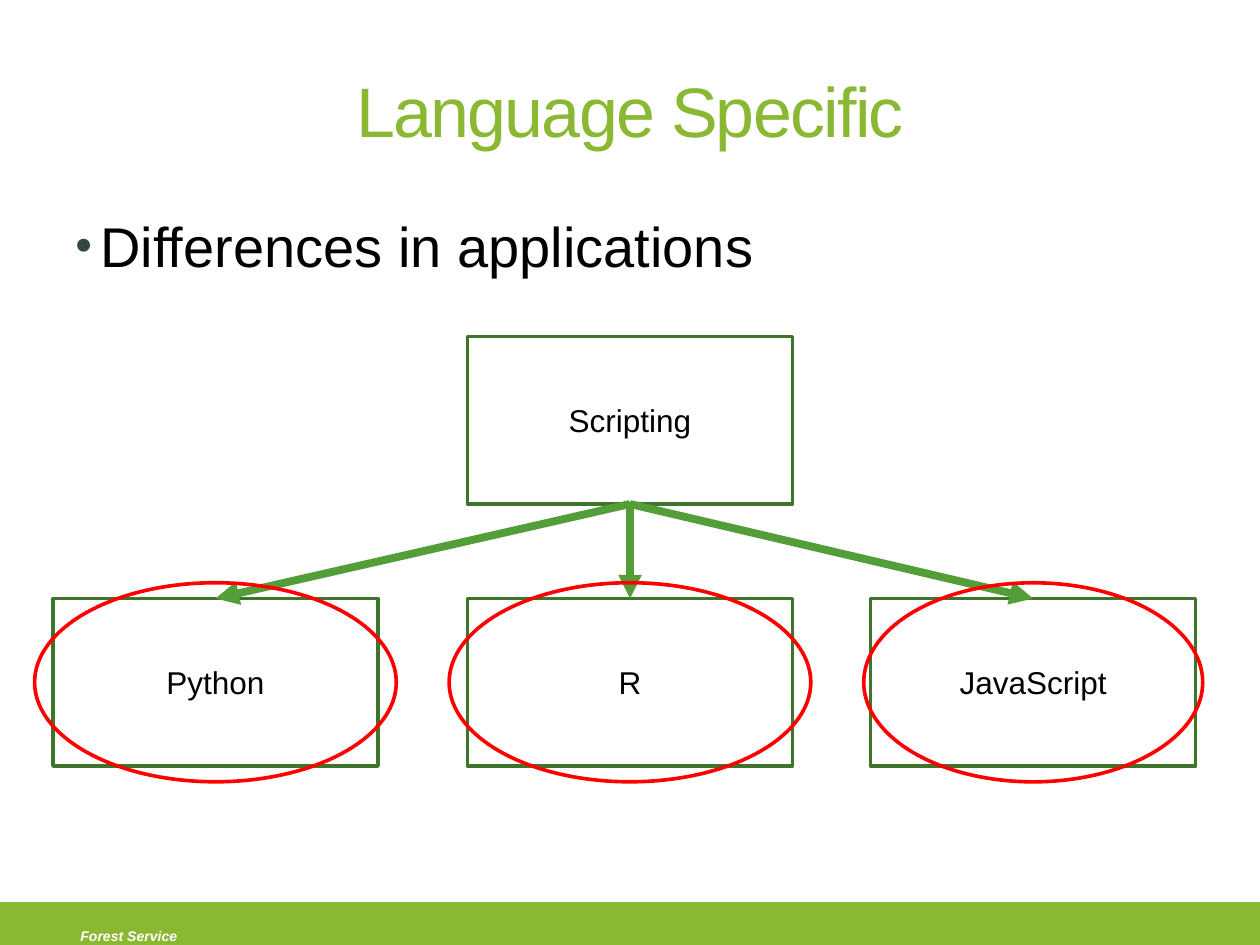
from dataclasses import dataclass

from lxml.etree import SubElement
from pptx import Presentation
from pptx.dml.color import RGBColor
from pptx.enum.shapes import MSO_CONNECTOR, MSO_SHAPE
from pptx.enum.text import MSO_ANCHOR, PP_ALIGN
from pptx.oxml.ns import qn
from pptx.util import Inches, Pt

# The slide is a grid of 100 columns by 75 rows
COL, ROW = Inches(10) // 100, Inches(7.5) // 75
FONT = "Arial"
LIME, GREEN, DARK_GREEN = "8AB833", "549E39", "3E752A"
RED, BLACK, WHITE, SLATE = "FF0000", "000000", "FFFFFF", "34473D"
OUTLINE = 2.08


@dataclass
class Area:
    col: float
    row: float
    cols: float
    rows: float

    def emu(self) -> tuple:
        return (round(self.col * COL), round(self.row * ROW),
                round(self.cols * COL), round(self.rows * ROW))

    def around(self, dx: float, dy: float) -> "Area":
        return Area(self.col - dx, self.row - dy,
                    self.cols + 2 * dx, self.rows + 2 * dy)


@dataclass
class Language:
    name: str
    col: float
    ring_margin: float


BOX_COLS, BOX_ROWS = 25.8, 13.3
PARENT_ROW, CHILD_ROW, CENTRE_COL = 26.7, 47.5, 37.1
LANGUAGES = [
    Language("Python", 4.2, 1.45),
    Language("R", CENTRE_COL, 1.45),
    Language("JavaScript", 69.1, 0.55),
]


def rgb(color: str) -> RGBColor:
    return RGBColor.from_string(color)


def write(sp, text: str, size: float, color: str, align=PP_ALIGN.LEFT,
          anchor=MSO_ANCHOR.TOP):
    tf = sp.text_frame
    tf.word_wrap = True
    tf.vertical_anchor = anchor
    p = tf.paragraphs[0]
    p.text = text
    p.alignment = align
    r = p.runs[0]
    r.font.name, r.font.size = FONT, Pt(size)
    r.font.color.rgb = rgb(color)
    return r


def add_text(slide, area: Area, text: str, size: float, color: str, **layout):
    return write(slide.shapes.add_textbox(*area.emu()), text, size, color, **layout)


def add_figure(slide, kind, area: Area, line: str, fill: str = ""):
    sp = slide.shapes.add_shape(kind, *area.emu())
    sp.shadow.inherit = False
    if fill:
        sp.fill.solid()
        sp.fill.fore_color.rgb = rgb(fill)
    else:
        sp.fill.background()
    sp.line.color.rgb = rgb(line)
    sp.line.width = Pt(OUTLINE)
    return sp


def add_box(slide, area: Area, label: str):
    sp = add_figure(slide, MSO_SHAPE.RECTANGLE, area, DARK_GREEN)
    write(sp, label, 18, BLACK, PP_ALIGN.CENTER, MSO_ANCHOR.MIDDLE)
    return sp


def add_arrow(slide, parent, child) -> None:
    """Join the bottom of the parent to the top of the child."""
    line = slide.shapes.add_connector(MSO_CONNECTOR.STRAIGHT, 0, 0, 0, 0)
    line.begin_connect(parent, 2)
    line.end_connect(child, 0)
    line.line.color.rgb = rgb(GREEN)
    line.line.width = Pt(4.5)
    SubElement(line.line._get_or_add_ln(), qn("a:tailEnd"), type="triangle")
    SubElement(line._element.spPr, qn("a:effectLst"))


def add_bullet(p, color: str, size_percent: int, indent: float) -> None:
    pPr = p._p.get_or_add_pPr()
    pPr.set("marL", str(Inches(indent)))
    pPr.set("indent", str(-Inches(indent)))
    SubElement(SubElement(pPr, qn("a:buClr")), qn("a:srgbClr"), val=color)
    SubElement(pPr, qn("a:buSzPct"), val=str(size_percent * 1000))
    SubElement(pPr, qn("a:buFont"), typeface=FONT)
    SubElement(pPr, qn("a:buChar"), char="•")


def add_heading(slide) -> None:
    title = add_text(slide, Area(5, 3.3, 90, 10.8), "Language Specific", 40, LIME,
                     align=PP_ALIGN.CENTER, anchor=MSO_ANCHOR.MIDDLE)
    title._r.get_or_add_rPr().set("spc", "-100")
    body = slide.shapes.add_textbox(*Area(5, 16.3, 90, 7).emu())
    add_bullet(body.text_frame.paragraphs[0], SLATE, 85, 0.2)
    write(body, "Differences in applications", 32, BLACK)


def add_footer(slide) -> None:
    add_figure(slide, MSO_SHAPE.RECTANGLE, Area(0, 71.7, 100, 3.3), LIME, LIME)
    r = add_text(slide, Area(5.4, 73.1, 20.4, 1.9), "Forest Service", 8, WHITE)
    r.font.bold = r.font.italic = True


def add_tree(slide) -> None:
    parent = add_box(slide, Area(CENTRE_COL, PARENT_ROW, BOX_COLS, BOX_ROWS), "Scripting")
    areas = [Area(lang.col, CHILD_ROW, BOX_COLS, BOX_ROWS) for lang in LANGUAGES]
    children = [add_box(slide, a, lang.name) for a, lang in zip(areas, LANGUAGES)]
    for child in children:
        add_arrow(slide, parent, child)
    for area, lang in zip(areas, LANGUAGES):
        add_figure(slide, MSO_SHAPE.OVAL, area.around(lang.ring_margin, 1.25), RED)


def main() -> None:
    prs = Presentation()
    prs.slide_width, prs.slide_height = 100 * COL, 75 * ROW
    slide = prs.slides.add_slide(prs.slide_layouts[6])
    add_footer(slide)
    add_heading(slide)
    add_tree(slide)
    prs.save("out.pptx")


if __name__ == "__main__":
    main()
